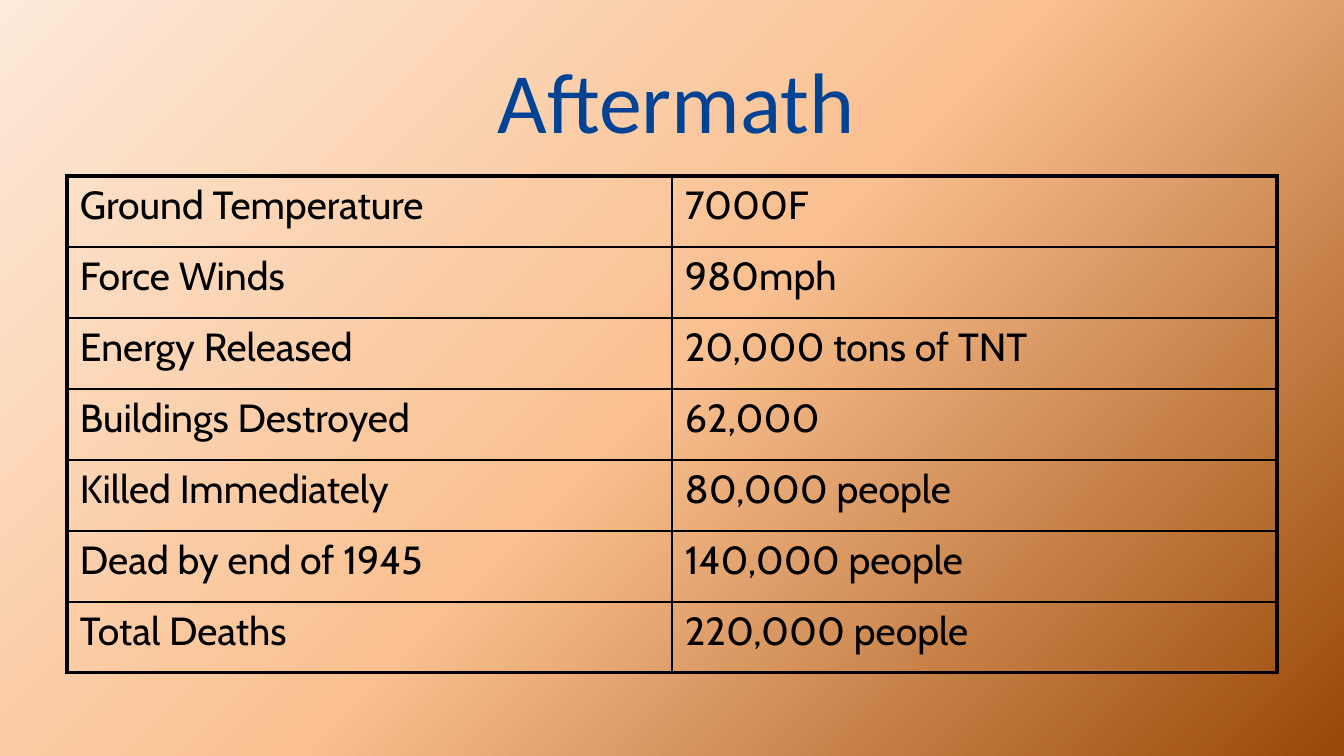
from lxml import etree
from pptx import Presentation
from pptx.dml.color import RGBColor
from pptx.enum.text import MSO_ANCHOR, MSO_AUTO_SIZE, PP_ALIGN
from pptx.oxml.ns import qn
from pptx.util import Pt

CENTER = PP_ALIGN.CENTER
BOTTOM = MSO_ANCHOR.BOTTOM
TOP = MSO_ANCHOR.TOP
NO_FIT = MSO_AUTO_SIZE.NONE
TITLE_ONLY = 5

PX = 914400 / 134.4
COLORS = {
    "title": "004395",
    "text": "000000",
    "border": "000000",
    "dark": "984807",
    "middle": "FAC090",
    "light": "FDEADA",
}
FACTS = [
    ("Ground Temperature", "7000F"),
    ("Force Winds", "980mph"),
    ("Energy Released", "20,000 tons of TNT"),
    ("Buildings Destroyed", "62,000"),
    ("Killed Immediately", "80,000 people"),
    ("Dead by end of 1945", "140,000 people"),
    ("Total Deaths", "220,000 people"),
]


def px(length):
    return round(length * PX)


def add_node(parent, tag, **attributes):
    return etree.SubElement(parent, qn(tag), attributes)


class SlideBuilder:
    title_font, title_size = "Calibri", 46
    table_font, table_size = "Cabin", 21
    outer_line, inner_line = 2.25, 1

    def __init__(self, page):
        self.page = page

    def background(self, stops):
        """Radial gradient that starts in the bottom right corner."""
        self.page.background.fill.gradient()
        gradient = self.page.element.find(".//" + qn("a:gradFill"))
        for child in list(gradient):
            gradient.remove(child)
        stop_list = add_node(gradient, "a:gsLst")
        for percent, color in stops:
            stop = add_node(stop_list, "a:gs", pos=str(percent * 1000))
            add_node(stop, "a:srgbClr", val=COLORS[color])
        circle = add_node(gradient, "a:path", path="circle")
        add_node(circle, "a:fillToRect", l="100000", t="100000")

    def span(self, para, text, font, size, color):
        span = para.add_run()
        span.text = text
        span.font.name = font
        span.font.size = Pt(size)
        span.font.color.rgb = RGBColor.from_string(COLORS[color])

    def title(self, text, left, top, width, height, indent):
        box = self.page.shapes.title
        box.left, box.top, box.width, box.height = map(px, (left, top, width, height))
        frame = box.text_frame
        frame.auto_size = NO_FIT
        frame.vertical_anchor = BOTTOM
        para = frame.paragraphs[0]
        para.alignment = CENTER
        properties = para._p.get_or_add_pPr()
        properties.set("marL", str(px(indent)))
        properties.set("indent", "0")
        self.span(para, text, self.title_font, self.title_size, "title")

    def borders(self, cell, widths):
        """Widths in points, in the order left, right, top, bottom."""
        properties = cell._tc.get_or_add_tcPr()
        for index, (side, width) in enumerate(zip("LRTB", widths)):
            line = etree.Element(qn("a:ln" + side), w=str(Pt(width)))
            fill = add_node(line, "a:solidFill")
            add_node(fill, "a:srgbClr", val=COLORS["border"])
            properties.insert(index, line)

    def cell(self, cell, text, at_edges):
        cell.margin_left = cell.margin_right = px(13)
        cell.margin_top = cell.margin_bottom = px(6)
        cell.vertical_anchor = TOP
        cell.fill.background()
        self.borders(cell, [self.outer_line if edge else self.inner_line for edge in at_edges])
        para = cell.text_frame.paragraphs[0]
        spacing = add_node(para._p.get_or_add_pPr(), "a:spcBef")
        add_node(spacing, "a:spcPct", val="20000")
        self.span(para, text, self.table_font, self.table_size, "text")

    def table(self, rows, left, top, column_width, row_height):
        row_count, column_count = len(rows), len(rows[0])
        table = self.page.shapes.add_table(
            row_count, column_count, px(left), px(top),
            px(column_width * column_count), px(row_height * row_count)).table
        table.first_row = table.horz_banding = False
        for column in table.columns:
            column.width = px(column_width)
        for r, texts in enumerate(rows):
            table.rows[r].height = px(row_height)
            for c, text in enumerate(texts):
                at_edges = (c == 0, c == column_count - 1, r == 0, r == row_count - 1)
                self.cell(table.cell(r, c), text, at_edges)


def main():
    deck = Presentation()
    deck.slide_width, deck.slide_height = px(1344), px(756)
    builder = SlideBuilder(deck.slides.add_slide(deck.slide_layouts[TITLE_ONLY]))

    # Backdrop and heading
    builder.background([(0, "dark"), (50, "middle"), (100, "light")])
    builder.title("Aftermath", 67, 31, 1210, 126, indent=8)

    # Facts and figures
    builder.table(FACTS, 67, 176, column_width=605, row_height=71)

    deck.save("out.pptx")


if __name__ == "__main__":
    main()
